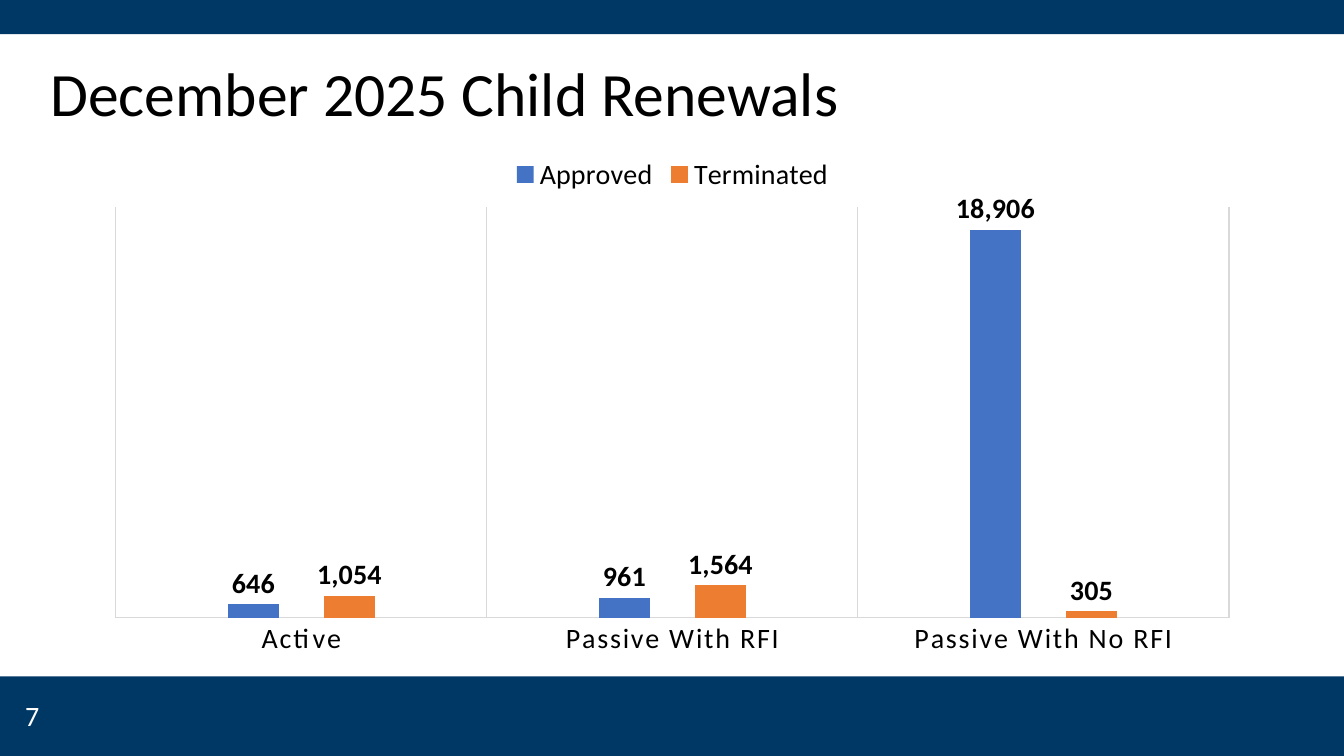
from dataclasses import dataclass

from lxml.etree import SubElement
from pptx import Presentation
from pptx.chart.data import CategoryChartData
from pptx.dml.color import RGBColor
from pptx.enum.chart import (
    XL_CHART_TYPE as ChartType,
    XL_LABEL_POSITION as LabelPosition,
    XL_LEGEND_POSITION as LegendPosition,
    XL_TICK_MARK as TickMark,
)
from pptx.enum.shapes import MSO_SHAPE as Preset
from pptx.enum.text import MSO_ANCHOR as Anchor, MSO_AUTO_SIZE as AutoSize, PP_ALIGN as Align
from pptx.oxml.ns import qn
from pptx.util import Inches, Pt


@dataclass(frozen=True)
class Theme:
    font: str = "Calibri"
    navy: str = "003865"
    white: str = "FFFFFF"
    black: str = "000000"
    grid: str = "D9D9D9"
    approved: str = "4472C4"
    terminated: str = "ED7D31"
    title_size: int = 44
    body_size: int = 20


THEME = Theme()
TITLE_ONLY = 5
SLIDE_WIDTH, SLIDE_HEIGHT = 13.33, 7.5
CATEGORIES = ["Active", "Passive With RFI", "Passive With No RFI"]
SERIES = [
    ("Approved", THEME.approved, (646, 961, 18906)),
    ("Terminated", THEME.terminated, (1054, 1564, 305)),
]
PLOT_AREA = {"x": 0.02, "y": 0.12, "w": 0.96, "h": 0.78}


def apply(target, formats):
    for name, value in formats.items():
        setattr(target, name, value)


def style_font(font, size, color=THEME.black, bold=False):
    apply(font, {"name": THEME.font, "size": Pt(size), "bold": bold})
    font.color.rgb = RGBColor.from_string(color)


def style_line(line, color):
    line.color.rgb = RGBColor.from_string(color)
    line.width = Pt(0.75)


def add_band(slide, top, height):
    shape = slide.shapes.add_shape(
        Preset.RECTANGLE, 0, Inches(top), Inches(SLIDE_WIDTH), Inches(height))
    shape.shadow.inherit = False
    shape.fill.solid()
    shape.fill.fore_color.rgb = RGBColor.from_string(THEME.navy)
    shape.line.fill.background()


def set_title(slide, text):
    title = slide.shapes.title
    apply(title, {"left": Inches(0.4), "top": Inches(0.23),
                  "width": Inches(11.5), "height": Inches(1.45)})
    frame = title.text_frame
    apply(frame, {"text": text, "word_wrap": True,
                  "auto_size": AutoSize.NONE, "vertical_anchor": Anchor.MIDDLE})
    paragraph = frame.paragraphs[0]
    apply(paragraph, {"alignment": Align.LEFT, "line_spacing": 0.9})
    style_font(paragraph.font, THEME.title_size)


def add_page_number(slide, text):
    box = slide.shapes.add_textbox(Inches(0.15), Inches(6.88), Inches(3), Inches(0.4))
    apply(box.text_frame, {"text": text, "word_wrap": True})
    style_font(box.text_frame.paragraphs[0].font, THEME.body_size, THEME.white)


def set_plot_area(chart, area):
    """Fix the inner plot area as fractions of the chart frame."""
    plot_area = chart.plots[0]._element.getparent()
    layout = plot_area.find(qn("c:layout"))
    if layout is None:
        layout = SubElement(plot_area, qn("c:layout"))
        plot_area.insert(0, layout)
    manual = SubElement(layout, qn("c:manualLayout"))
    settings = {"layoutTarget": "inner", "xMode": "edge", "yMode": "edge", **area}
    for name, value in settings.items():
        SubElement(manual, qn(f"c:{name}")).set("val", str(value))


def style_axes(chart):
    category_axis = chart.category_axis
    apply(category_axis, {"major_tick_mark": TickMark.NONE,
                          "minor_tick_mark": TickMark.NONE,
                          "has_major_gridlines": True})
    for part in (category_axis, category_axis.major_gridlines):
        style_line(part.format.line, THEME.grid)
    style_font(category_axis.tick_labels.font, THEME.body_size)
    # Letter spacing of the category names, in hundredths of a point
    for properties in category_axis._element.iter(qn("a:defRPr")):
        properties.set("spc", "120")
    apply(chart.value_axis, {"visible": False, "has_major_gridlines": False,
                             "minimum_scale": 0, "maximum_scale": 20000})


def style_series(series, color):
    series.format.fill.solid()
    series.format.fill.fore_color.rgb = RGBColor.from_string(color)
    labels = series.data_labels
    apply(labels, {"show_value": True, "position": LabelPosition.OUTSIDE_END,
                   "number_format": "#,##0", "number_format_is_linked": False})
    style_font(labels.font, THEME.body_size, bold=True)


def add_renewals_chart(slide):
    data = CategoryChartData(number_format="#,##0")
    data.categories = CATEGORIES
    for name, _, values in SERIES:
        data.add_series(name, values)
    chart = slide.shapes.add_chart(
        ChartType.COLUMN_CLUSTERED, Inches(0.92), Inches(1.43),
        Inches(11.5), Inches(5.22), data).chart
    apply(chart, {"has_title": False, "has_legend": True})
    style_font(chart.font, 10)
    apply(chart.legend, {"position": LegendPosition.TOP, "include_in_layout": False})
    style_font(chart.legend.font, THEME.body_size)
    style_axes(chart)
    plot = chart.plots[0]
    apply(plot, {"gap_width": 444, "overlap": -90, "vary_by_categories": False})
    for series, (_, color, _) in zip(plot.series, SERIES):
        style_series(series, color)
    set_plot_area(chart, PLOT_AREA)


def main():
    presentation = Presentation()
    apply(presentation, {"slide_width": Inches(SLIDE_WIDTH),
                         "slide_height": Inches(SLIDE_HEIGHT)})
    slide = presentation.slides.add_slide(presentation.slide_layouts[TITLE_ONLY])

    # Top and bottom bands, with the title in front of them
    for top, height in ((0, 0.34), (6.71, 0.79)):
        add_band(slide, top, height)
    set_title(slide, "December 2025 Child Renewals")
    slide.shapes._spTree.append(slide.shapes.title._element)

    # Content and page number
    add_renewals_chart(slide)
    add_page_number(slide, "7")
    presentation.save("out.pptx")


if __name__ == "__main__":
    main()
